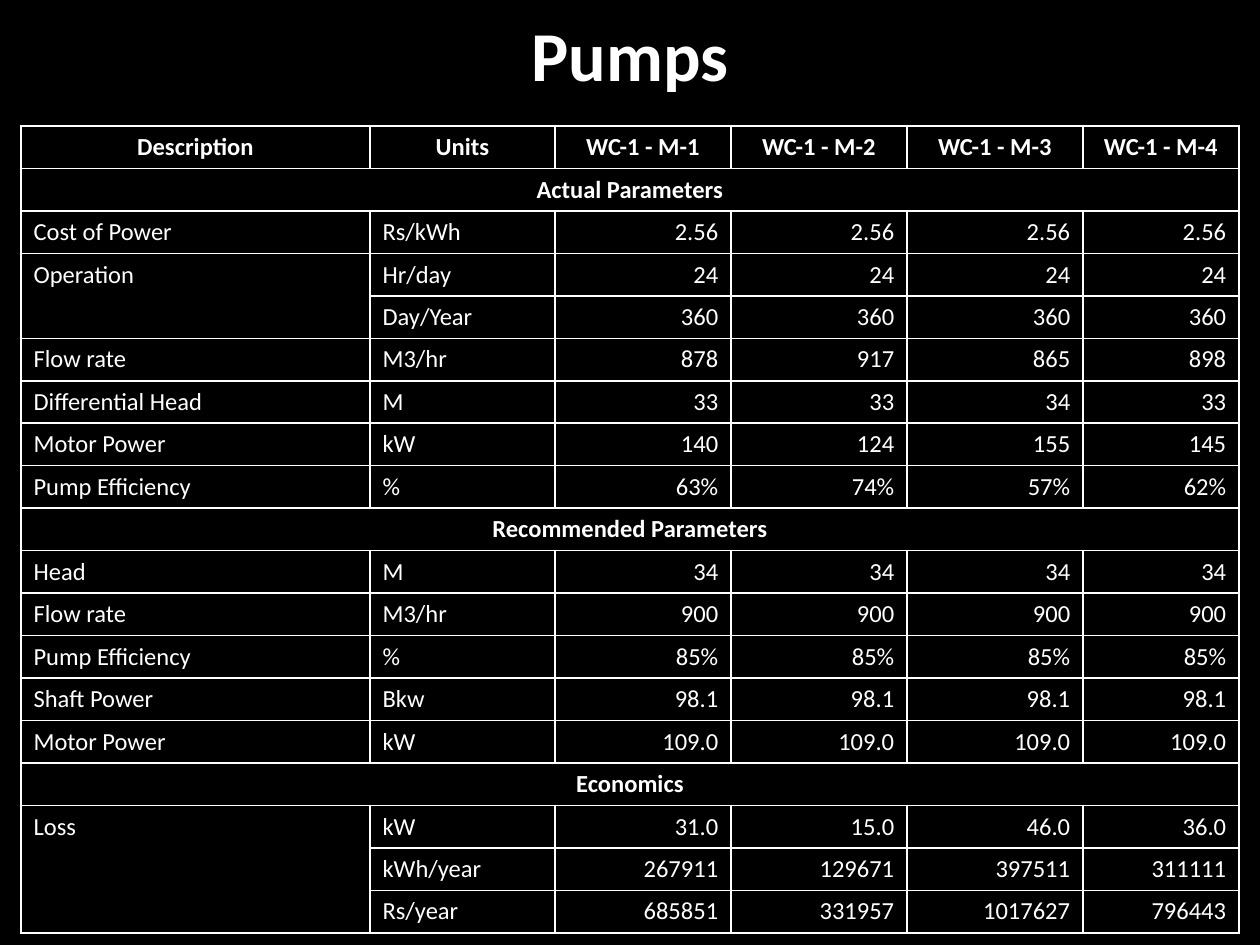
import pptx
import pptx.dml.color
import pptx.enum.text
import pptx.oxml
import pptx.oxml.ns
import pptx.util

SCALE = 914400 / 126
BLACK = pptx.dml.color.RGBColor(0, 0, 0)
WHITE = pptx.dml.color.RGBColor(255, 255, 255)
ALIGN = pptx.enum.text.PP_ALIGN
ANCHOR = pptx.enum.text.MSO_ANCHOR
COLS = [349, 185, 176, 176, 176, 156]
INDENT = 48

# A lone entry is a section band; None continues the label above.
ROWS = [
    ["Description", "Units", "WC-1 - M-1", "WC-1 - M-2", "WC-1 - M-3", "WC-1 - M-4"],
    ["Actual Parameters"],
    ["Cost of Power", "Rs/kWh"] + ["2.56"] * 4,
    ["Operation", "Hr/day"] + ["24"] * 4,
    [None, "Day/Year"] + ["360"] * 4,
    ["Flow rate", "M3/hr", "878", "917", "865", "898"],
    ["Differential Head", "M", "33", "33", "34", "33"],
    ["Motor Power", "kW", "140", "124", "155", "145"],
    ["Pump Efficiency", "%", "63%", "74%", "57%", "62%"],
    ["Recommended Parameters"],
    ["Head", "M"] + ["34"] * 4,
    ["Flow rate", "M3/hr"] + ["900"] * 4,
    ["Pump Efficiency", "%"] + ["85%"] * 4,
    ["Shaft Power", "Bkw"] + ["98.1"] * 4,
    ["Motor Power", "kW"] + ["109.0"] * 4,
    ["Economics"],
    ["Loss", "kW", "31.0", "15.0", "46.0", "36.0"],
    [None, "kWh/year", "267911", "129671", "397511", "311111"],
    [None, "Rs/year", "685851", "331957", "1017627", "796443"],
]


def px(n):
    return pptx.util.Emu(round(n * SCALE))


def style(para, size, bold, align):
    para.alignment = align
    look = {"name": "Calibri", "size": pptx.util.Pt(size), "bold": bold}
    for key, value in look.items():
        setattr(para.font, key, value)
        for run in para.runs:
            setattr(run.font, key, value)
    for run in para.runs:
        run.font.color.rgb = WHITE


def border(cell):
    props = cell._tc.get_or_add_tcPr()
    for side in "LRTB":
        props.append(pptx.oxml.parse_xml(
            f'<a:ln{side} {pptx.oxml.ns.nsdecls("a")} w="12700"><a:solidFill>'
            f'<a:srgbClr val="{WHITE}"/></a:solidFill></a:ln{side}>'))


def write(cell, text, bold, align, anchor):
    cell.text = text
    cell.vertical_anchor = anchor
    para = cell.text_frame.paragraphs[0]
    style(para, 14, bold, align)
    props = para._p.get_or_add_pPr()
    props.set("marL", str(px(INDENT)))
    props.set("indent", str(-px(INDENT)))


def add_title(slide, text, left, top, width, height):
    title = slide.shapes.title
    place = {"left": left, "top": top, "width": width, "height": height}
    for key, value in place.items():
        setattr(title, key, px(value))
    title.text = text
    title.text_frame.vertical_anchor = ANCHOR.MIDDLE
    style(title.text_frame.paragraphs[0], 40, True, ALIGN.CENTER)


def add_grid(slide, left, top, width, height):
    frame = slide.shapes.add_table(
        len(ROWS), len(COLS), px(left), px(top), px(width), px(height))
    table = frame.table
    table.first_row = table.horz_banding = False
    for col, size in zip(table.columns, COLS):
        col.width = px(size * width / sum(COLS))
    for row in table.rows:
        row.height = px(height / len(ROWS))
    for cell in table.iter_cells():
        border(cell)
        cell.fill.background()

    last = len(COLS) - 1
    for r, row in enumerate(ROWS):
        band = len(row) == 1
        if band:
            table.cell(r, 0).merge(table.cell(r, last))
        end = r
        while end + 1 < len(ROWS) and ROWS[end + 1][0] is None:
            end += 1
        tall = row[0] is not None and end > r
        if tall:
            table.cell(r, 0).merge(table.cell(end, 0))
        for c, text in enumerate(row):
            if text is None:
                continue
            head = r == 0 or band
            align = ALIGN.CENTER if head else ALIGN.LEFT if c < 2 else ALIGN.RIGHT
            high = r == 0 or (tall and c == 0)
            write(table.cell(r, c), text, head, align,
                  ANCHOR.TOP if high else ANCHOR.BOTTOM)


def main():
    deck = pptx.Presentation()
    deck.slide_width, deck.slide_height = px(1260), px(945)
    slide = deck.slides.add_slide(deck.slide_layouts[5])
    slide.background.fill.solid()
    slide.background.fill.fore_color.rgb = BLACK
    add_title(slide, "Pumps", 0, 0, 1260, 107)
    add_grid(slide, 21, 126, 1218, 798)
    deck.save("out.pptx")


if __name__ == "__main__":
    main()
